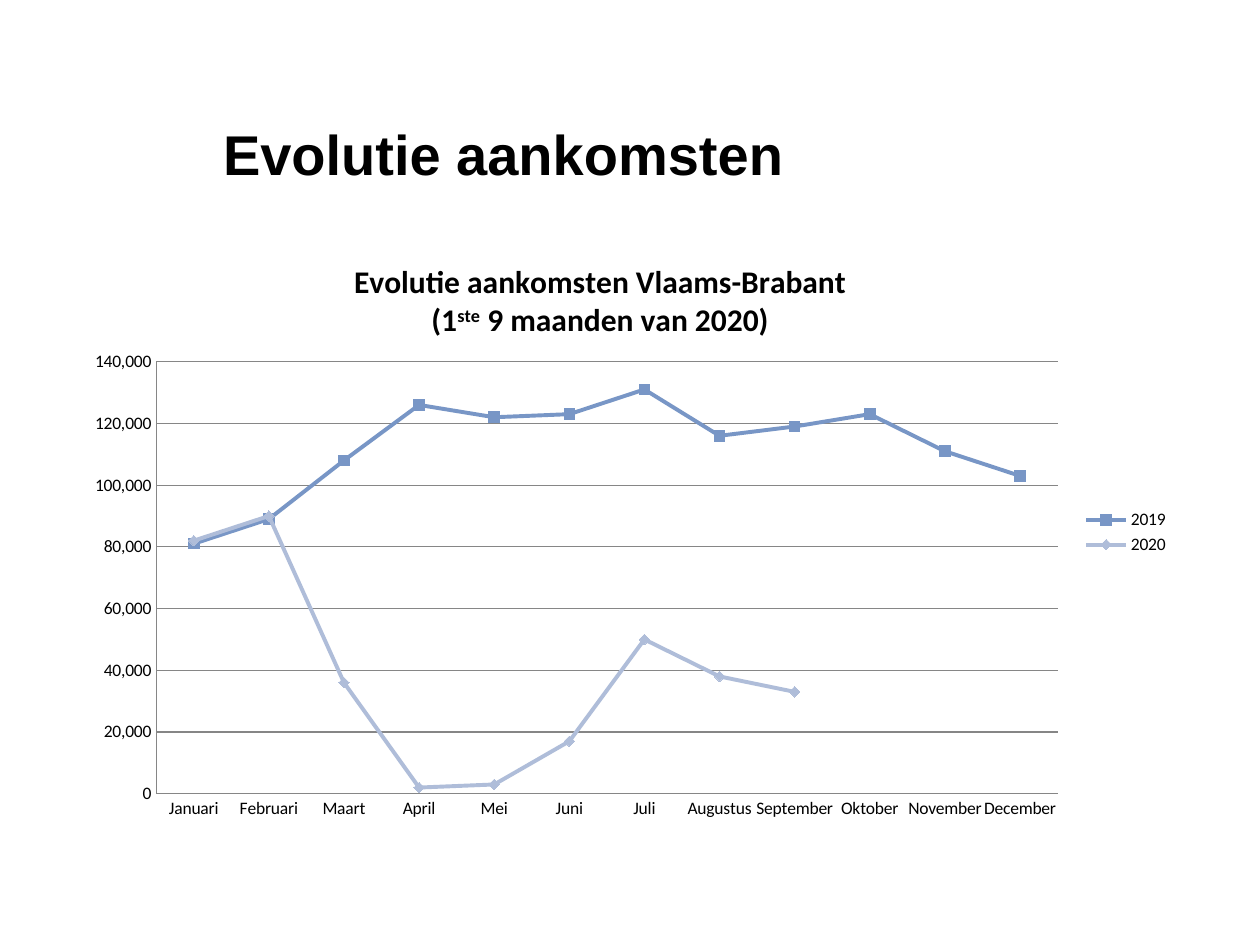
from lxml import etree
from pptx import Presentation
from pptx import util as u
from pptx.chart.data import CategoryChartData
from pptx.dml.color import RGBColor
from pptx.enum import chart as charts, text
from pptx.oxml.ns import qn

COLOURS = {"text": "000000", "grid": "868686", "2019": "7896C6", "2020": "AFBDD9"}
MARKERS = {"2019": charts.XL_MARKER_STYLE.SQUARE, "2020": charts.XL_MARKER_STYLE.DIAMOND}
MONTHS = ["Januari", "Februari", "Maart", "April", "Mei", "Juni", "Juli",
          "Augustus", "September", "Oktober", "November", "December"]
ARRIVALS = {
    "2019": [81000, 89000, 108000, 126000, 122000, 123000,
             131000, 116000, 119000, 123000, 111000, 103000],
    "2020": [82000, 90000, 36000, 2000, 3000, 17000,
             50000, 38000, 33000, None, None, None],
}
CHART_TITLE = [
    [("Evolutie aankomsten Vlaams-Brabant", False)],
    [("(1", False), ("ste", True), (" 9 maanden van 2020)", False)],
]


def colour(name):
    return RGBColor.from_string(COLOURS[name])


def set_font(font, name, size, bold):
    font.name = name
    font.size = u.Pt(size)
    font.bold = bold
    font.color.rgb = colour("text")


def set_line(line, name, width):
    line.color.rgb = colour(name)
    line.width = u.Pt(width)


def set_layout(element, index, values):
    for old in element.findall(qn("c:layout")):
        element.remove(old)
    layout = etree.Element(qn("c:layout"))
    manual = etree.SubElement(layout, qn("c:manualLayout"))
    for tag, value in values.items():
        etree.SubElement(manual, qn("c:" + tag)).set("val", str(value))
    element.insert(index, layout)


def add_heading(page, left, top, width, height):
    box = page.shapes.title
    box.left, box.top, box.width, box.height = left, top, width, height
    frame = box.text_frame
    frame.word_wrap = True
    frame.auto_size = text.MSO_AUTO_SIZE.NONE
    frame.vertical_anchor = text.MSO_ANCHOR.MIDDLE
    frame.margin_left = frame.margin_top = 0
    frame.margin_right, frame.margin_bottom = u.Inches(0.1), u.Inches(0.05)
    para = frame.paragraphs[0]
    para.alignment = text.PP_ALIGN.LEFT
    span = para.add_run()
    span.text = "Evolutie aankomsten"
    set_font(span.font, "Arial", 32, True)


def write_chart_title(chart):
    frame = chart.chart_title.text_frame
    for number, spans in enumerate(CHART_TITLE):
        para = frame.add_paragraph() if number else frame.paragraphs[0]
        para.alignment = text.PP_ALIGN.CENTER
        for words, raised in spans:
            span = para.add_run()
            span.text = words
            set_font(span.font, "Calibri", 18, True)
            if raised:
                span.font._element.set("baseline", "30000")
    set_layout(chart.chart_title._element, 1,
               {"xMode": "edge", "yMode": "edge", "x": 0.25, "y": 0.04})


def format_axes(chart):
    for axis in (chart.category_axis, chart.value_axis):
        axis.major_tick_mark = axis.minor_tick_mark = charts.XL_TICK_MARK.NONE
        set_line(axis.format.line, "grid", 0.75)
    values = chart.value_axis
    values.minimum_scale, values.maximum_scale, values.major_unit = 0, 140000, 20000
    values.has_major_gridlines = True
    set_line(values.major_gridlines.format.line, "grid", 0.75)
    values.tick_labels.number_format = "#,##0"
    values.tick_labels.number_format_is_linked = False


def format_series(chart):
    chart.plots[0].vary_by_categories = False
    for series in chart.plots[0].series:
        series.smooth = False
        set_line(series.format.line, series.name, 2.25)
        marker = series.marker
        marker.style = MARKERS[series.name]
        marker.size = 6
        marker.format.fill.solid()
        marker.format.fill.fore_color.rgb = colour(series.name)
        set_line(marker.format.line, series.name, 0.75)


def add_arrivals_chart(page, left, top, width, height):
    data = CategoryChartData(number_format="#,##0")
    data.categories = MONTHS
    for year, values in ARRIVALS.items():
        data.add_series(year, values)
    chart = page.shapes.add_chart(charts.XL_CHART_TYPE.LINE_MARKERS,
                                  left, top, width, height, data).chart
    set_font(chart.font, "Calibri", 10, False)
    write_chart_title(chart)
    format_axes(chart)
    format_series(chart)
    chart.has_legend = True
    chart.legend.position = charts.XL_LEGEND_POSITION.RIGHT
    chart.legend.include_in_layout = False
    set_layout(chart._chartSpace.chart.plotArea, 0,
               {"layoutTarget": "inner", "xMode": "edge", "yMode": "edge",
                "x": 0.075, "y": 0.215, "w": 0.813, "h": 0.722})


def main():
    deck = Presentation()
    deck.slide_width, deck.slide_height = u.Inches(10), u.Inches(7.5)
    page = deck.slides.add_slide(deck.slide_layouts.get_by_name("Title Only"))
    add_heading(page, u.Inches(1.77), u.Inches(0.92), u.Inches(7.6), u.Inches(0.64))
    add_arrivals_chart(page, u.Inches(0.58), u.Inches(1.85), u.Inches(8.8), u.Inches(4.75))
    deck.save("out.pptx")


if __name__ == "__main__":
    main()
